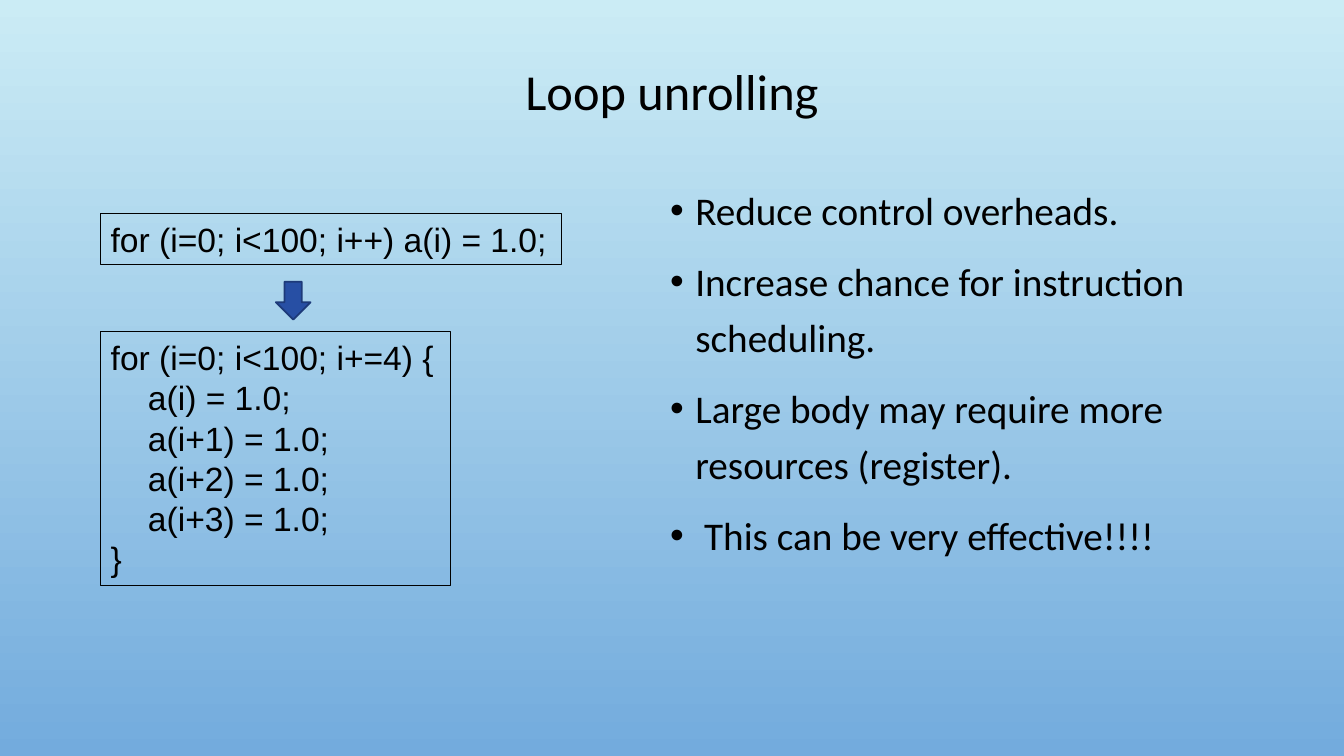
"""Build the loop unrolling slide."""
from dataclasses import dataclass

from lxml.etree import SubElement
from pptx import Presentation
from pptx.dml.color import RGBColor
from pptx.enum.shapes import MSO_SHAPE
from pptx.enum.text import MSO_ANCHOR, MSO_AUTO_SIZE, PP_ALIGN
from pptx.oxml.ns import qn
from pptx.slide import Slide
from pptx.util import Pt

BLACK = RGBColor(0x00, 0x00, 0x00)
SKY_TOP = RGBColor(0xCB, 0xEC, 0xF5)
SKY_BOTTOM = RGBColor(0x73, 0xAB, 0xDD)
ARROW_FILL = RGBColor(0x27, 0x4F, 0xA4)
ARROW_LINE = RGBColor(0x1D, 0x3A, 0x79)


@dataclass(frozen=True)
class Area:
    left: float
    top: float
    width: float
    height: float

    def lengths(self) -> tuple[Pt, Pt, Pt, Pt]:
        return Pt(self.left), Pt(self.top), Pt(self.width), Pt(self.height)


@dataclass(frozen=True)
class CodeBox:
    area: Area
    lines: tuple[str, ...]


@dataclass(frozen=True)
class Bullet:
    text: str
    indent: float = 18


TITLE_AREA = Area(72, 23, 816, 88.5)
BULLET_AREA = Area(471.6, 123.1, 416.9, 332.6)
ARROW_AREA = Area(197, 201.3, 24.8, 27)

CODE_BOXES = (
    CodeBox(Area(72, 152.5, 329, 36.3), ("for (i=0; i<100; i++) a(i) = 1.0;",)),
    CodeBox(
        Area(72, 237, 249.6, 181.5),
        (
            "for (i=0; i<100; i+=4) {",
            "    a(i) = 1.0;",
            "    a(i+1) = 1.0;",
            "    a(i+2) = 1.0;",
            "    a(i+3) = 1.0;",
            "}",
        ),
    ),
)

BULLETS = (
    Bullet("Reduce control overheads."),
    Bullet("Increase chance for instruction scheduling."),
    Bullet("Large body may require more resources (register)."),
    Bullet("This can be very effective!!!!", indent=24.3),
)


def write(para, text: str, *, size: float, font: str = "Calibri",
          align: PP_ALIGN = PP_ALIGN.LEFT, spacing: float = 1.0,
          before: float = 0) -> None:
    para.alignment = align
    para.line_spacing = spacing
    para.space_before = Pt(before)
    span = para.add_run()
    span.text = text
    span.font.size = Pt(size)
    span.font.name = font
    span.font.color.rgb = BLACK


def next_paragraph(frame, index: int):
    return frame.add_paragraph() if index else frame.paragraphs[0]


def add_bullet_mark(para, indent: float) -> None:
    properties = para._p.get_or_add_pPr()
    properties.set("marL", str(Pt(indent)))
    properties.set("indent", str(-Pt(indent)))
    color = SubElement(properties, qn("a:buClr"))
    SubElement(color, qn("a:srgbClr"), val=str(BLACK))
    SubElement(properties, qn("a:buFont"), typeface="Arial")
    SubElement(properties, qn("a:buChar"), char="•")


def paint_background(page: Slide) -> None:
    fill = page.background.fill
    fill.gradient()
    fill.gradient_angle = 270
    for stop, color in zip(fill.gradient_stops, (SKY_TOP, SKY_BOTTOM)):
        stop.color.rgb = color


def draw_title(page: Slide, text: str) -> None:
    frame = page.shapes.add_textbox(*TITLE_AREA.lengths()).text_frame
    frame.word_wrap = True
    frame.vertical_anchor = MSO_ANCHOR.MIDDLE
    write(frame.paragraphs[0], text, size=36, align=PP_ALIGN.CENTER, spacing=0.9)


def draw_bullets(page: Slide) -> None:
    frame = page.shapes.add_textbox(*BULLET_AREA.lengths()).text_frame
    frame.word_wrap = True
    for index, bullet in enumerate(BULLETS):
        para = next_paragraph(frame, index)
        add_bullet_mark(para, bullet.indent)
        write(para, bullet.text, size=28, spacing=1.2, before=10 if index else 0)


def draw_code(page: Slide, code: CodeBox) -> None:
    box = page.shapes.add_textbox(*code.area.lengths())
    box.line.color.rgb = BLACK
    box.line.width = Pt(0.75)
    frame = box.text_frame
    frame.word_wrap = False
    frame.auto_size = MSO_AUTO_SIZE.SHAPE_TO_FIT_TEXT
    for index, line in enumerate(code.lines):
        write(next_paragraph(frame, index), line, size=24, font="Arial")


def draw_arrow(page: Slide) -> None:
    arrow = page.shapes.add_shape(MSO_SHAPE.DOWN_ARROW, *ARROW_AREA.lengths())
    arrow.shadow.inherit = False
    arrow.fill.solid()
    arrow.fill.fore_color.rgb = ARROW_FILL
    arrow.line.color.rgb = ARROW_LINE
    arrow.line.width = Pt(1.25)


def main() -> None:
    deck = Presentation()
    deck.slide_width, deck.slide_height = Pt(960), Pt(540)
    page = deck.slides.add_slide(deck.slide_layouts[6])
    paint_background(page)
    draw_title(page, "Loop unrolling")
    draw_bullets(page)
    for code in CODE_BOXES:
        draw_code(page, code)
    draw_arrow(page)
    deck.save("out.pptx")


if __name__ == "__main__":
    main()
